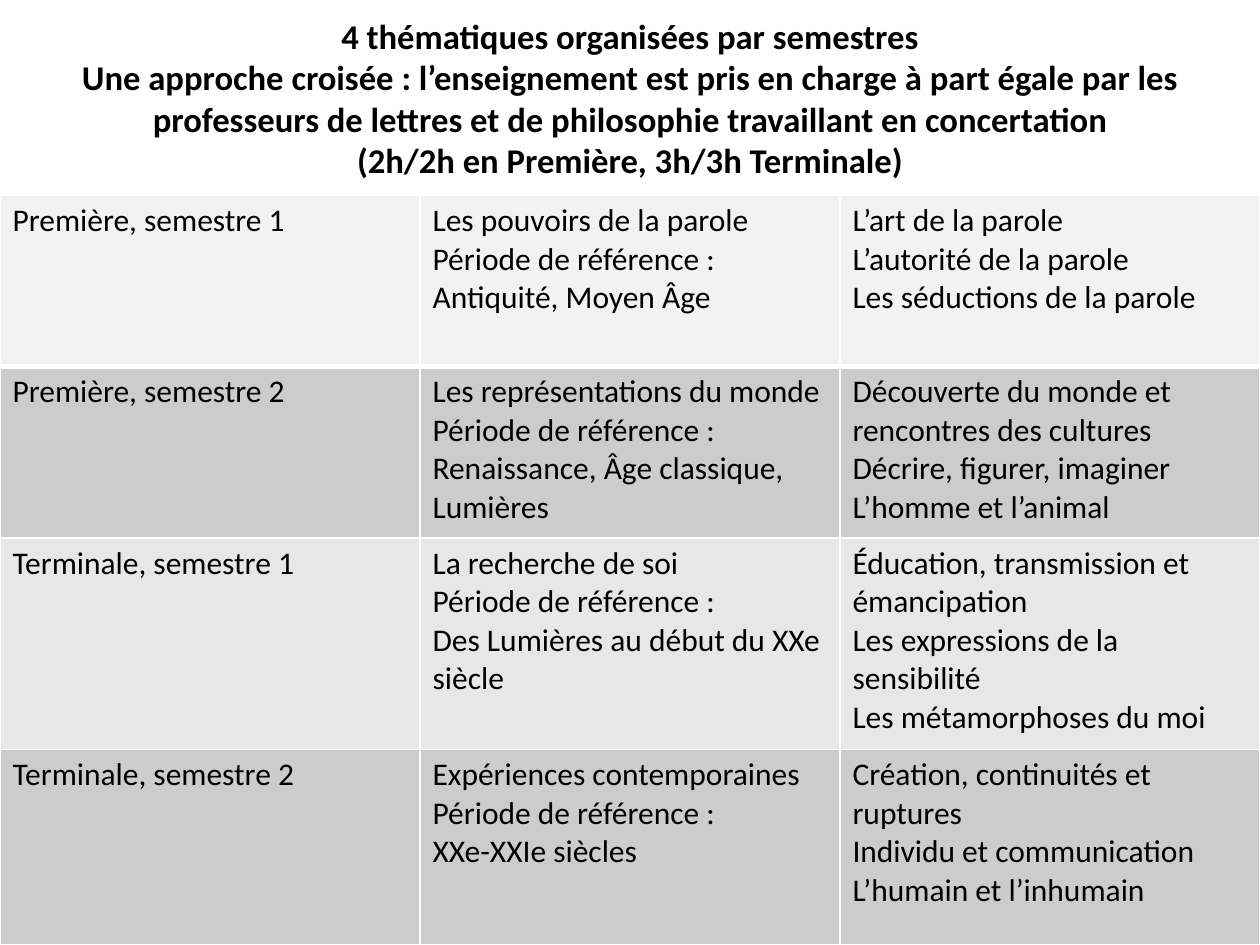
from lxml.etree import fromstring
from pptx import Presentation
from pptx.dml.color import RGBColor
from pptx.enum.text import MSO_ANCHOR, PP_ALIGN
from pptx.util import Pt

WIDTH, HEIGHT = 720, 540
TITLE_HEIGHT = 111.6
TITLE = [
    "4 thématiques organisées par semestres",
    "Une approche croisée : l’enseignement est pris en charge à part égale par les "
    "professeurs de lettres et de philosophie travaillant en concertation",
    "(2h/2h en Première, 3h/3h Terminale)",
]
PERIOD = "Période de référence :"
# Row height, fill, then the lines of each cell
ROWS = [
    (97.92, "F2F2F2", [
        ["Première, semestre 1"],
        ["Les pouvoirs de la parole", PERIOD, "Antiquité, Moyen Âge"],
        ["L’art de la parole", "L’autorité de la parole", "Les séductions de la parole"],
    ]),
    (97.92, "CCCCCC", [
        ["Première, semestre 2"],
        ["Les représentations du monde", PERIOD, "Renaissance, Âge classique, Lumières"],
        ["Découverte du monde et rencontres des cultures", "Décrire, figurer, imaginer",
         "L’homme et l’animal"],
    ]),
    (120.96, "E7E7E7", [
        ["Terminale, semestre 1"],
        ["La recherche de soi", PERIOD, "Des Lumières au début du XXe siècle"],
        ["Éducation, transmission et émancipation", "Les expressions de la sensibilité",
         "Les métamorphoses du moi"],
    ]),
    (111.6, "CCCCCC", [
        ["Terminale, semestre 2"],
        ["Expériences contemporaines", PERIOD, "XXe-XXIe siècles"],
        ["Création, continuités et ruptures", "Individu et communication",
         "L’humain et l’inhumain"],
    ]),
]
TITLE_FONT = {"name": "Calibri", "size": Pt(19.8), "bold": True}
CELL_FONT = {"name": "Calibri", "size": Pt(18), "bold": False}
NAMESPACE = "http://schemas.openxmlformats.org/drawingml/2006/main"


def color(hex_value):
    return RGBColor.from_string(hex_value)


def write_lines(frame, lines, font, align):
    """Put each line in its own paragraph."""
    for index, line in enumerate(lines):
        paragraph = frame.add_paragraph() if index else frame.paragraphs[0]
        paragraph.alignment = align
        run = paragraph.add_run()
        run.text = line
        for name, value in font.items():
            setattr(run.font, name, value)
        run.font.color.rgb = color("000000")


def add_borders(cell, widths, hex_value="FFFFFF"):
    properties = cell._tc.get_or_add_tcPr()
    for index, (side, width) in enumerate(widths.items()):
        properties.insert(index, fromstring(
            f'<a:ln{side} xmlns:a="{NAMESPACE}" w="{Pt(width)}"><a:solidFill>'
            f'<a:srgbClr val="{hex_value}"/></a:solidFill></a:ln{side}>'))


def add_title(slide):
    box = slide.shapes.add_textbox(0, 0, Pt(WIDTH), Pt(TITLE_HEIGHT))
    frame = box.text_frame
    frame.word_wrap = True
    frame.vertical_anchor = MSO_ANCHOR.MIDDLE
    write_lines(frame, TITLE, TITLE_FONT, PP_ALIGN.CENTER)


def add_programme(slide):
    columns = len(ROWS[0][2])
    table = slide.shapes.add_table(
        len(ROWS), columns, 0, Pt(TITLE_HEIGHT), Pt(WIDTH), Pt(HEIGHT - TITLE_HEIGHT)).table
    table.first_row = table.horz_banding = False
    for column in table.columns:
        column.width = Pt(WIDTH / columns)
    for row_index, (height, fill, cells) in enumerate(ROWS):
        table.rows[row_index].height = Pt(height)
        borders = {"L": 1, "R": 1, "T": 3 if row_index == 1 else 1,
                   "B": 3 if row_index == 0 else 1}
        for column_index, lines in enumerate(cells):
            cell = table.cell(row_index, column_index)
            cell.fill.solid()
            cell.fill.fore_color.rgb = color(fill)
            add_borders(cell, borders)
            write_lines(cell.text_frame, lines, CELL_FONT, PP_ALIGN.LEFT)


def main():
    presentation = Presentation()
    presentation.slide_width, presentation.slide_height = Pt(WIDTH), Pt(HEIGHT)
    slide = presentation.slides.add_slide(presentation.slide_layouts[6])
    add_title(slide)
    add_programme(slide)
    presentation.save("out.pptx")


if __name__ == "__main__":
    main()
